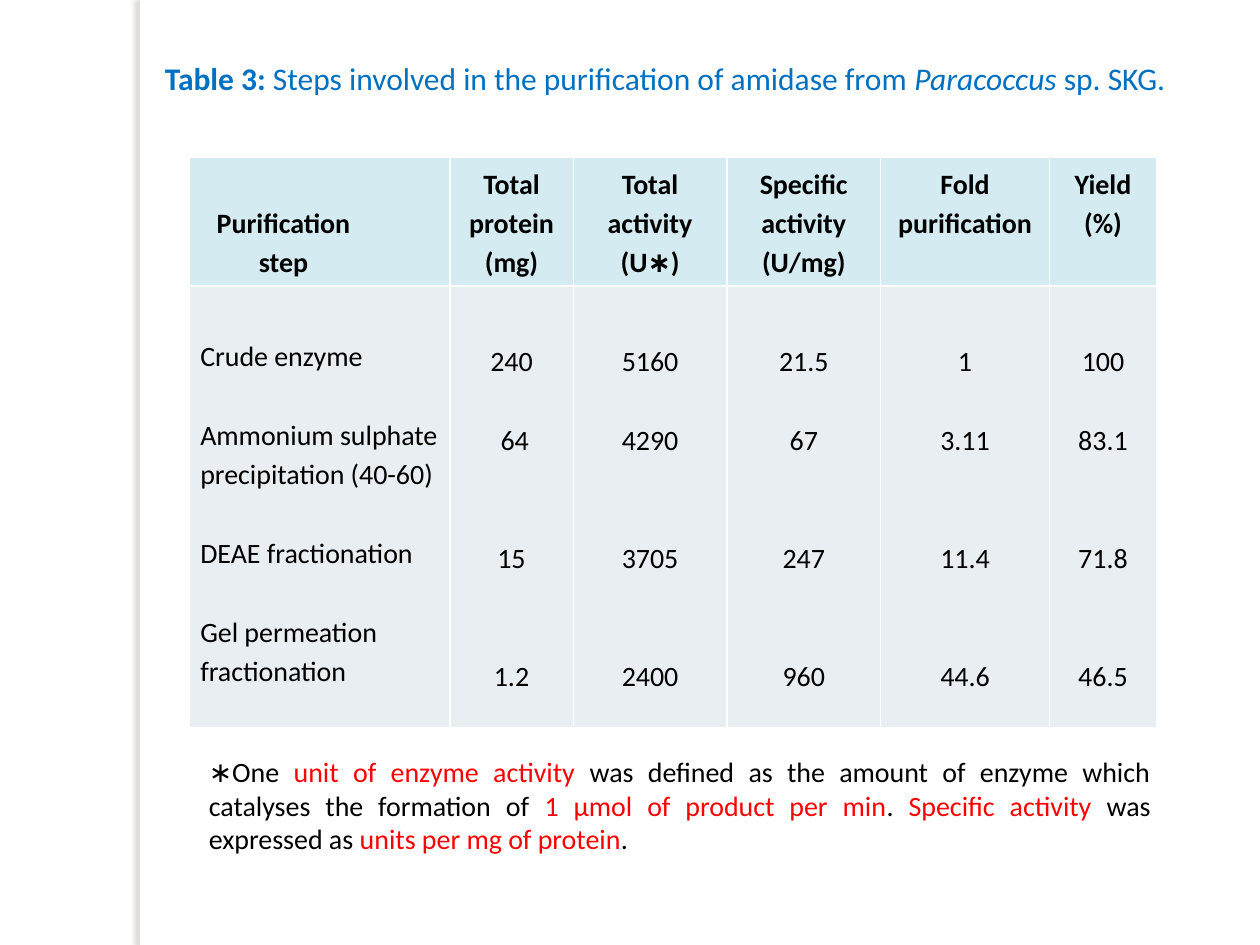
"""Build the slide with the amidase purification table."""
from dataclasses import dataclass
from typing import Any

from lxml import etree
from pptx import Presentation
from pptx import util as u
from pptx.dml.color import RGBColor
from pptx.enum import shapes, text
from pptx.oxml import ns

BLACK = RGBColor(0x00, 0x00, 0x00)
WHITE = RGBColor(0xFF, 0xFF, 0xFF)
RED = RGBColor(0xFF, 0x00, 0x00)
BLUE = RGBColor(0x00, 0x70, 0xC0)
SHADOW = RGBColor(0x73, 0x6F, 0x63)
HEAD_FILL = RGBColor(0xD4, 0xEB, 0xF1)
BODY_FILL = RGBColor(0xE8, 0xEE, 0xF1)

FONT = "Calibri"
LINE = 22.5
LEFT, CENTER, JUSTIFY = text.PP_ALIGN.LEFT, text.PP_ALIGN.CENTER, text.PP_ALIGN.JUSTIFY
ROW_HEIGHTS = (1.02, 3.51)


@dataclass
class Span:
    text: str
    color: RGBColor = BLACK
    bold: bool = False
    italic: bool = False


@dataclass
class Note:
    box: tuple[float, float, float, float]
    size: int
    anchor: Any
    spans: list[Span]


@dataclass
class Column:
    width: float
    head: list[str]
    values: list[str]
    gaps: tuple[int, ...] = (0, 1, 2, 2)
    align: Any = CENTER
    head_top: float = 0.04
    head_right: float = 0.09
    body_top: float = 0.43


NOTES = [
    Note((1.21, 0.42, 8.38, 0.4), 18, text.MSO_ANCHOR.MIDDLE, [
        Span("Table 3: ", BLUE, bold=True),
        Span("Steps involved in the purification of amidase from ", BLUE),
        Span("Paracoccus", BLUE, italic=True),
        Span(" sp. SKG.", BLUE),
    ]),
    Note((1.56, 5.94, 7.67, 0.91), 16, text.MSO_ANCHOR.TOP, [
        Span("∗One "),
        Span("unit of enzyme activity ", RED),
        Span("was defined as the amount of enzyme which catalyses the formation of "),
        Span("1 μmol of product per min", RED),
        Span(". "),
        Span("Specific activity ", RED),
        Span("was expressed as "),
        Span("units per mg of protein", RED),
        Span("."),
    ]),
]

COLUMNS = [
    Column(2.07, ["Purification", "step"],
           ["Crude enzyme", "Ammonium sulphate precipitation (40-60)",
            "DEAE fractionation", "Gel permeation fractionation"],
           (0, 1, 1, 1), LEFT, 0.35, 0.66, 0.39),
    Column(0.98, ["Total protein (mg)"], ["240", " 64", "15", "1.2"]),
    Column(1.22, ["Total activity", "(U∗)"], ["5160", "4290", "3705", "2400"]),
    Column(1.22, ["Specific activity (U/mg)"], ["21.5", "67", "247", "960"]),
    Column(1.34, ["Fold purification"], ["1", "3.11", "11.4", "44.6"]),
    Column(0.85, ["Yield (%)"], ["100", "83.1", "71.8", "46.5"]),
]


def apply(target: Any, values: dict[str, Any]) -> None:
    """Set every attribute named in values."""
    for name, value in values.items():
        setattr(target, name, value)


def add_run(p: Any, span: Span, size: int) -> None:
    """Append one formatted run."""
    r = p.add_run()
    r.text = span.text
    apply(r.font, {"name": FONT, "size": u.Pt(size), "bold": span.bold, "italic": span.italic})
    r.font.color.rgb = span.color


def add_strip(s: Any) -> None:
    """Draw the white vertical strip with its soft left shadow."""
    sp = s.shapes.add_shape(shapes.MSO_SHAPE.RECTANGLE, u.Inches(1.11), 0,
                            u.Inches(0.08), u.Inches(7.5))
    sp.fill.solid()
    sp.fill.fore_color.rgb = WHITE
    sp.line.fill.background()
    sp.shadow.inherit = False
    effects = sp._element.spPr.find(ns.qn("a:effectLst"))
    shadow = etree.SubElement(effects, ns.qn("a:outerShdw"), blurRad=str(u.Pt(3)),
                              dist=str(u.Pt(3)), dir="10800000", rotWithShape="0")
    color = etree.SubElement(shadow, ns.qn("a:srgbClr"), val=str(SHADOW))
    etree.SubElement(color, ns.qn("a:alpha"), val="25000")


def add_note(s: Any, note: Note) -> None:
    """Add a justified text box of mixed runs."""
    tf = s.shapes.add_textbox(*map(u.Inches, note.box)).text_frame
    apply(tf, {"word_wrap": True, "vertical_anchor": note.anchor,
               "auto_size": text.MSO_AUTO_SIZE.SHAPE_TO_FIT_TEXT})
    p = tf.paragraphs[0]
    p.alignment = JUSTIFY
    for span in note.spans:
        add_run(p, span, note.size)


def fill_cell(cell: Any, lines: list[str], gaps: tuple[int, ...], align: Any, bold: bool,
              fill: RGBColor, top: float, right: float = 0.09) -> None:
    """Write spaced lines into a cell and give it white borders."""
    apply(cell, {"margin_left": u.Inches(0.09), "margin_right": u.Inches(right),
                 "margin_top": u.Inches(top), "margin_bottom": 0,
                 "vertical_anchor": text.MSO_ANCHOR.TOP})
    props = cell._tc.get_or_add_tcPr()
    for side in ("lnL", "lnR", "lnT", "lnB"):
        ln = etree.SubElement(props, ns.qn(f"a:{side}"), w=str(u.Pt(1)))
        solid = etree.SubElement(ln, ns.qn("a:solidFill"))
        etree.SubElement(solid, ns.qn("a:srgbClr"), val=str(WHITE))
    cell.fill.solid()
    cell.fill.fore_color.rgb = fill
    tf = cell.text_frame
    for i, (line, gap) in enumerate(zip(lines, gaps)):
        p = tf.add_paragraph() if i else tf.paragraphs[0]
        apply(p, {"alignment": align, "line_spacing": 1.15, "space_before": u.Pt(gap * LINE)})
        add_run(p, Span(line, bold=bold), 16)


def add_steps_table(s: Any) -> None:
    """Add the purification table."""
    width = sum(c.width for c in COLUMNS)
    table = s.shapes.add_table(2, len(COLUMNS), u.Inches(1.5), u.Inches(1.25),
                               u.Inches(width), u.Inches(sum(ROW_HEIGHTS))).table
    for row, height in zip(table.rows, ROW_HEIGHTS):
        row.height = u.Inches(height)
    for i, c in enumerate(COLUMNS):
        table.columns[i].width = u.Inches(c.width)
        fill_cell(table.cell(0, i), c.head, (0, 0), CENTER, True, HEAD_FILL,
                  c.head_top, c.head_right)
        fill_cell(table.cell(1, i), c.values, c.gaps, c.align, False, BODY_FILL, c.body_top)


def main() -> None:
    """Build and save the slide."""
    prs = Presentation()
    apply(prs, {"slide_width": u.Inches(10), "slide_height": u.Inches(7.5)})
    s = prs.slides.add_slide(prs.slide_layouts[6])
    add_strip(s)
    for note in NOTES:
        add_note(s, note)
    add_steps_table(s)
    prs.save("out.pptx")


if __name__ == "__main__":
    main()
